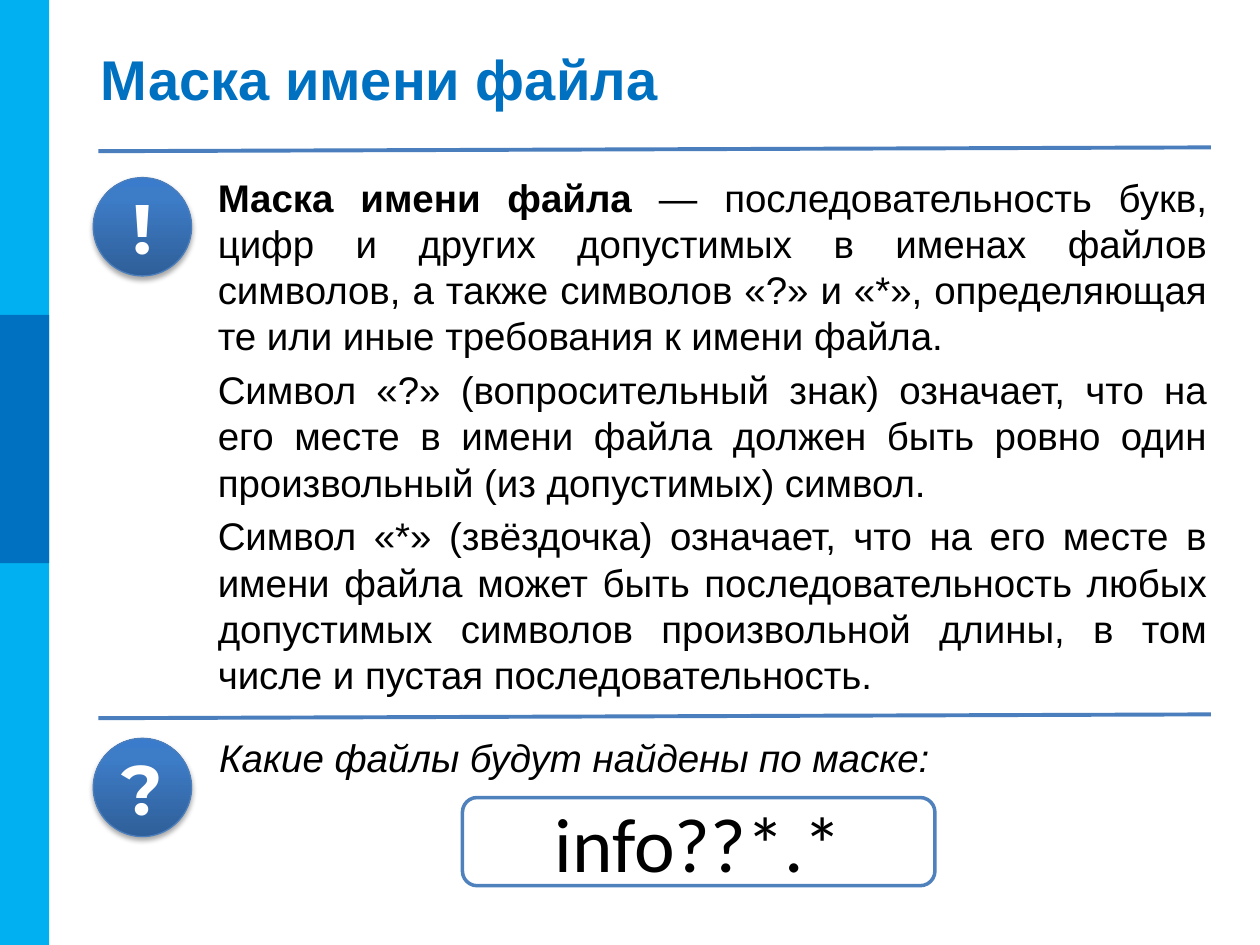
from copy import deepcopy

from lxml.etree import SubElement
from pptx import Presentation
from pptx.dml.color import RGBColor
from pptx.enum.shapes import MSO_CONNECTOR, MSO_SHAPE
from pptx.enum.text import MSO_ANCHOR, PP_ALIGN
from pptx.oxml import parse_xml
from pptx.oxml.ns import nsdecls, qn
from pptx.util import Inches, Pt

COLORS = {
    "sky": "00B0F0",
    "blue": "0070C0",
    "rule": "4B7EBC",
    "frame": "4F81BD",
    "black": "000000",
    "white": "FFFFFF",
}
BADGE_STOPS = [(0, "2F5F99"), (0.8, "3D7CC7"), (1, "3A7CCB")]
TERM = "Маска имени файла"
DEFINITION = [
    [(TERM, True), (" — последовательность букв, цифр и других допустимых в именах "
                    "файлов символов, а также символов «?» и «*», определяющая те или "
                    "иные требования к имени файла.", False)],
    [("Символ «?» (вопросительный знак) означает, что на его месте в имени файла "
      "должен быть ровно один произвольный (из допустимых) символ.", False)],
    [("Символ «*» (звёздочка) означает, что на его месте в имени файла может быть "
      "последовательность любых допустимых символов произвольной длины, в том числе "
      "и пустая последовательность.", False)],
]
QUESTION = [[("Какие файлы будут найдены по маске:", False)]]


def rgb(name):
    return RGBColor.from_string(COLORS[name])


def place(sp, left, top, width, height):
    sp.left, sp.top = Inches(left), Inches(top)
    sp.width, sp.height = Inches(width), Inches(height)


def style(font, name, size, color):
    font.name = name
    font.size = Pt(size)
    font.color.rgb = rgb(color)


def add_shape(s, kind, box, fill):
    sp = s.shapes.add_shape(kind, *map(Inches, box))
    sp.shadow.inherit = False
    sp.fill.solid()
    sp.fill.fore_color.rgb = rgb(fill)
    sp.line.fill.background()
    return sp


def outline(sp, color, width):
    sp.line.color.rgb = rgb(color)
    sp.line.width = Pt(width)


def add_label(sp, text, font, size, color):
    tf = sp.text_frame
    tf.vertical_anchor = MSO_ANCHOR.MIDDLE
    p = tf.paragraphs[0]
    p.text = text
    p.alignment = PP_ALIGN.CENTER
    style(p.font, font, size, color)
    return p


def set_title(s, text):
    sp = s.shapes.title
    place(sp, 0.7, 0.3, 9.02, 0.64)
    tf = sp.text_frame
    tf.vertical_anchor = MSO_ANCHOR.MIDDLE
    p = tf.paragraphs[0]
    p.text = text
    p.alignment = PP_ALIGN.LEFT
    style(p.font, "Arial", 32, "blue")
    p.font.bold = True


def add_text(s, box, paragraphs, italic=False):
    tf = s.shapes.add_textbox(*map(Inches, box)).text_frame
    tf.word_wrap = True
    for i, runs in enumerate(paragraphs):
        p = tf.add_paragraph() if i else tf.paragraphs[0]
        p.alignment = PP_ALIGN.JUSTIFY
        p.space_before = Pt(4.4)
        style(p.font, "Arial", 22, "black")
        p.font.italic = italic
        for text, bold in runs:
            r = p.add_run()
            r.text = text
            r.font.bold = bold


def add_rule(s, top):
    line = s.shapes.add_connector(MSO_CONNECTOR.STRAIGHT, Inches(0.78), Inches(top + 0.03),
                                  Inches(9.61), Inches(top))
    outline(line, "rule", 2.25)
    SubElement(line._element.spPr, qn("a:effectLst"))


def add_badge(s, top, mark):
    sp = add_shape(s, MSO_SHAPE.OVAL, (0.74, top, 0.78, 0.78), "blue")
    sp.fill.gradient()
    sp.fill.gradient_angle = 90
    stops = sp._element.spPr.find(qn("a:gradFill")).find(qn("a:gsLst"))
    stops.append(deepcopy(stops[-1]))
    for stop, (position, color) in zip(sp.fill.gradient_stops, BADGE_STOPS):
        stop.position = position
        stop.color.rgb = RGBColor.from_string(color)
    outline(sp, "rule", 0.75)
    shadow = parse_xml(
        f'<a:outerShdw {nsdecls("a")} blurRad="{Pt(3.1)}" dist="{Pt(1.8)}" dir="5400000" '
        f'rotWithShape="0"><a:srgbClr val="{COLORS["black"]}"><a:alpha val="35000"/>'
        '</a:srgbClr></a:outerShdw>')
    sp._element.spPr.find(qn("a:effectLst")).append(shadow)
    add_label(sp, mark, "Montserrat", 40, "white").font.bold = True


def add_mask(s, text):
    sp = add_shape(s, MSO_SHAPE.ROUNDED_RECTANGLE, (3.67, 6.33, 3.75, 0.7), "white")
    outline(sp, "frame", 2)
    tf = sp.text_frame
    tf.margin_left = tf.margin_right = Inches(0.08)
    tf.margin_top = tf.margin_bottom = Inches(0.04)
    add_label(sp, text, "Calibri", 44, "black")


def main():
    prs = Presentation()
    prs.slide_width, prs.slide_height = Inches(10), Inches(7.5)
    s = prs.slides.add_slide(prs.slide_layouts[5])
    add_shape(s, MSO_SHAPE.RECTANGLE, (0, 0, 0.39, 7.5), "sky")
    add_shape(s, MSO_SHAPE.RECTANGLE, (0, 2.5, 0.39, 1.97), "blue")
    set_title(s, TERM)
    add_text(s, (1.63, 1.33, 8.05, 1.64), DEFINITION)
    add_text(s, (1.64, 5.78, 7.97, 0.55), QUESTION, italic=True)
    for top in (1.17, 5.67):
        add_rule(s, top)
    for top, mark in ((1.41, "!"), (5.86, "?")):
        add_badge(s, top, mark)
    add_mask(s, "info??*.*")
    prs.save("out.pptx")


if __name__ == "__main__":
    main()
